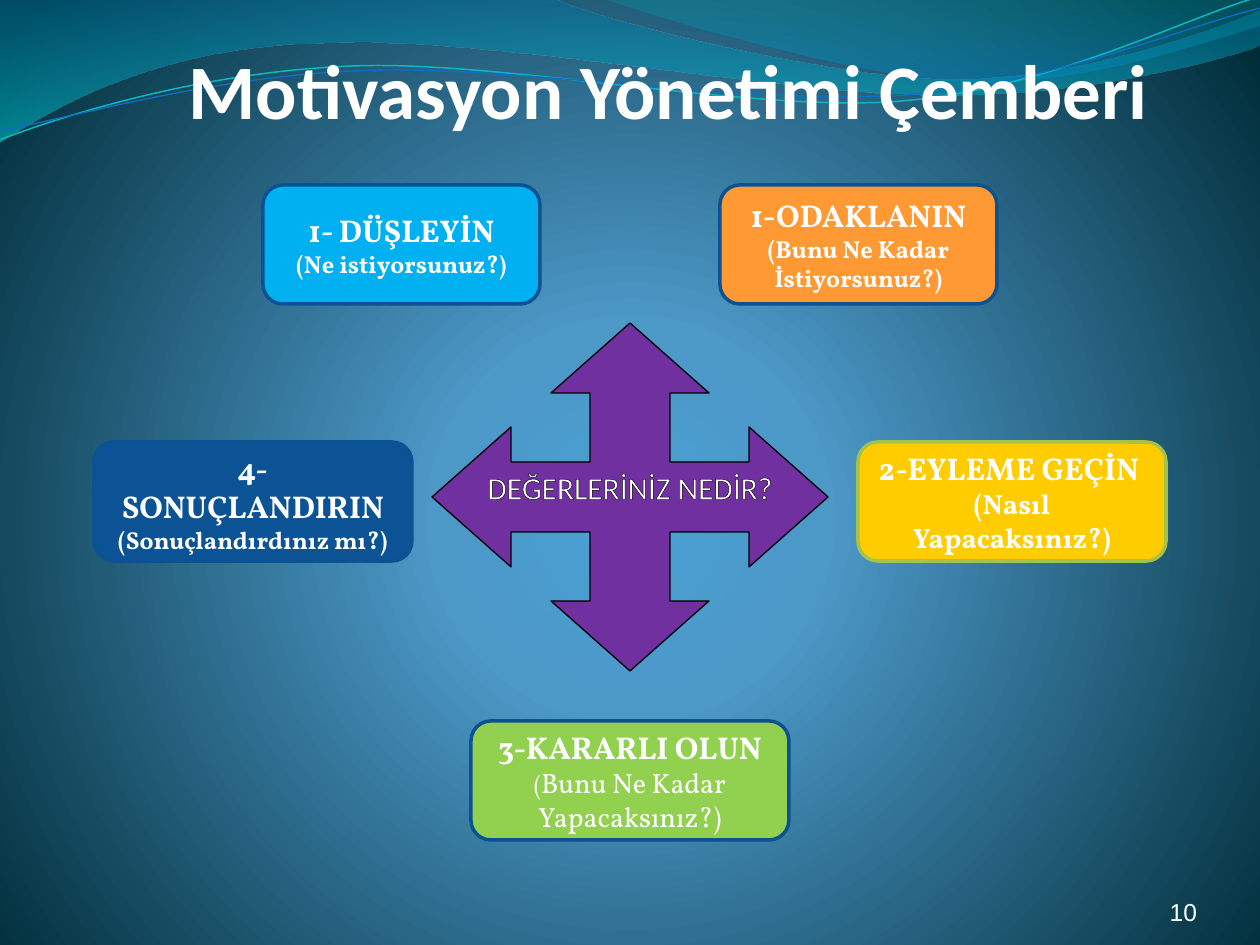
from pptx import Presentation
from pptx.dml.color import RGBColor
from pptx.enum.shapes import MSO_SHAPE
from pptx.enum.text import MSO_ANCHOR, MSO_AUTO_SIZE, PP_ALIGN
from pptx.oxml import parse_xml
from pptx.oxml.ns import nsdecls, qn
from pptx.util import Pt

PX = 914400 / 126
WHITE = RGBColor(0xFF, 0xFF, 0xFF)
BLACK = RGBColor(0, 0, 0)
PURPLE = RGBColor(0x70, 0x30, 0xA0)
ORANGE = RGBColor(0xFF, 0x99, 0x33)
YELLOW = RGBColor(0xFF, 0xCC, 0x00)
GREEN = RGBColor(0x92, 0xD0, 0x50)
NAVY = RGBColor(0x0B, 0x53, 0x94)
SKY = RGBColor(0x00, 0xB0, 0xF0)
EDGE = RGBColor(0x0B, 0x52, 0x92)
LIME = RGBColor(0xA5, 0xC2, 0x49)
TEAL = RGBColor(0x0A, 0xB8, 0xBF)
BLUE = RGBColor(0x0F, 0x6F, 0xC6)


def shade(fill, root, stops, way):
    """Give root a gradient of (position, colour, opacity) stops, in percent."""
    fill.gradient()
    old = next(root.iter(qn("a:gradFill")))
    marks = "".join(
        f'<a:gs pos="{pos * 1000}"><a:srgbClr val="{tint}">'
        f'<a:alpha val="{seen * 1000}"/></a:srgbClr></a:gs>'
        for pos, tint, seen in stops)
    old.getparent().replace(old, parse_xml(
        f'<a:gradFill {nsdecls("a")} rotWithShape="1">'
        f"<a:gsLst>{marks}</a:gsLst>{way}</a:gradFill>"))


def write(para, text, size, font, bold=False):
    run = para.add_run()
    run.text = text
    run.font.size = Pt(size)
    run.font.name = font
    run.font.bold = bold
    run.font.color.rgb = WHITE
    return run


deck = Presentation()
deck.slide_width, deck.slide_height = round(1260 * PX), round(945 * PX)
slide = deck.slides.add_slide(deck.slide_layouts[5])
shapes = slide.shapes

# Background
shade(slide.background.fill, slide.element,
      [(0, "4AA0D6", 100), (25, "4C98C7", 100), (100, "002C38", 100)],
      '<a:path path="circle"><a:fillToRect l="10000" t="110000" '
      'r="10000" b="100000"/></a:path>')

# Waves: a step of one point is straight, a step of three is a Bezier curve
waves = [
    ((0, 0),
     [[(554, -1)], [(600, 21), (837, 79), (955, 79)],
      [(1075, 79), (1207, 33), (1260, 11)], [(1261, 45)],
      [(1239, 55), (1096, 96), (940, 95)], [(784, 95), (481, 35), (324, 43)],
      [(163, 45), (58, 105), (-1, 142)], [(0, 0)]],
     [(0, "0074A1", 45), (100, "00C6CF", 55)], None, 0),
    ((604, -1),
     [[(641, 14), (859, 78), (969, 82)], [(1079, 87), (1211, 40), (1260, 26)],
      [(1260, 0)], [(604, -1)]],
     [(0, "00A1A9", 30), (80, "008BBF", 45)], None, 0),
    ((-2, 110),
     [[(58, 90), (199, 52), (350, 53)], [(499, 53), (745, 118), (896, 114)],
      [(1049, 109), (1184, 45), (1260, 27)]], None, TEAL, 0.85),
    ((-2, 101),
     [[(57, 94), (207, 57), (357, 58)], [(509, 58), (750, 112), (902, 108)],
      [(1052, 104), (1188, 52), (1262, 38)]], None, BLUE, 0.75),
]
for start, steps, stops, tint, width in waves:
    pen = shapes.build_freeform(*start, scale=PX)
    pen.add_line_segments([dot for step in steps for dot in step],
                          close=bool(stops))
    wave = pen.convert_to_shape()
    wave.shadow.inherit = False
    lines = iter(list(wave.element.iter(qn("a:lnTo"))))
    for step in steps:
        parts = [next(lines) for dot in step]
        if len(parts) == 3:
            curve = parse_xml(f'<a:cubicBezTo {nsdecls("a")}/>')
            parts[0].addprevious(curve)
            for part in parts:
                curve.append(part[0])
                part.getparent().remove(part)
    if stops:
        shade(wave.fill, wave.element, stops, '<a:lin ang="5400000" scaled="1"/>')
        wave.line.fill.background()
    else:
        wave.rotation = 357.3
        wave.fill.background()
        wave.line.color.rgb = tint
        wave.line.width = Pt(width)

# Title, in front of the waves
title = shapes.title
title.left, title.top, title.width, title.height = (
    round(n * PX) for n in (75, 15, 1076, 120))
shapes.element.append(title.element)
frame = title.text_frame
frame.auto_size = MSO_AUTO_SIZE.NONE
frame.vertical_anchor = MSO_ANCHOR.BOTTOM
frame.margin_left = frame.margin_top = frame.margin_bottom = 0
frame.margin_right = round(2 * PX)
para = frame.paragraphs[0]
para.alignment = PP_ALIGN.RIGHT
write(para, "Motivasyon Yönetimi Çemberi", 44, "Calibri", True)

# Page number
page = shapes.add_textbox(*(round(n * PX) for n in (1092, 876, 105, 50)))
frame = page.text_frame
frame.word_wrap = True
frame.vertical_anchor = MSO_ANCHOR.BOTTOM
frame.margin_left = frame.margin_right = frame.margin_top = frame.margin_bottom = 0
para = frame.paragraphs[0]
para.alignment = PP_ALIGN.RIGHT
write(para, "10", 14, "Arial")

# Four-way arrow: one quarter in tenths of the size, mirrored around the centre
quarter = [(0, 5), (2, 3), (1, 3), (1, 1), (3, 1), (3, 2), (5, 0)]
dots = []
for sx, sy in ((1, -1), (1, 1), (-1, 1), (-1, -1)):
    part = quarter if sx * sy < 0 else quarter[::-1]
    dots += [(630 + sx * x * 39.7, 497 + sy * y * 34.8) for x, y in part[:-1]]
pen = shapes.build_freeform(*dots[0], scale=PX)
pen.add_line_segments(dots[1:])
arrow = pen.convert_to_shape()
arrow.shadow.inherit = False
arrow.fill.solid()
arrow.fill.fore_color.rgb = PURPLE
arrow.line.color.rgb = BLACK
arrow.line.width = Pt(0.75)
frame = arrow.text_frame
frame.word_wrap = True
frame.vertical_anchor = MSO_ANCHOR.TOP
frame.margin_top = round(145 * PX)
para = frame.paragraphs[0]
para.alignment = PP_ALIGN.CENTER
para.space_after = Pt(10)
run = write(para, "DEĞERLERİNİZ NEDİR?", 18, "Calibri")
run._r.get_or_add_rPr().insert(0, parse_xml(
    f'<a:ln {nsdecls("a")} w="9525"><a:solidFill>'
    f'<a:srgbClr val="{BLACK}"/></a:solidFill></a:ln>'))

# Steps: each paragraph is a list of (text, size, bold) runs
boxes = [
    (720, 185, 277, ORANGE, EDGE,
     [[("1-ODAKLANIN", 18, True)], [("(Bunu Ne Kadar İstiyorsunuz?)", 14, True)]]),
    (858, 442, 308, YELLOW, LIME,
     [[("2-EYLEME GEÇİN ", 18, True)], [("(Nasıl Yapacaksınız?)", 16, True)]]),
    (471, 721, 318, GREEN, EDGE,
     [[("3-KARARLI OLUN ", 18, True), ("(", 14, False),
       ("Bunu Ne Kadar Yapacaksınız?)", 16, False)]]),
    (94, 442, 318, NAVY, EDGE,
     [[("4-SONUÇLANDIRIN", 18, True)], [("(Sonuçlandırdınız mı?)", 14, True)]]),
    (263, 185, 277, SKY, EDGE,
     [[("1- DÜŞLEYİN", 18, True)], [("(Ne istiyorsunuz?)", 14, True)]]),
]
for x, y, wide, tint, edge, paras in boxes:
    box = shapes.add_shape(MSO_SHAPE.ROUNDED_RECTANGLE,
                           *(round(n * PX) for n in (x, y, wide, 119)))
    box.shadow.inherit = False
    box.fill.solid()
    box.fill.fore_color.rgb = tint
    box.line.color.rgb = edge
    box.line.width = Pt(2)
    frame = box.text_frame
    frame.word_wrap = True
    frame.vertical_anchor = MSO_ANCHOR.MIDDLE
    for i, runs in enumerate(paras):
        para = frame.add_paragraph() if i else frame.paragraphs[0]
        para.alignment = PP_ALIGN.CENTER
        for text, size, bold in runs:
            write(para, text, size, "Vollkorn", bold)

deck.save("out.pptx")
